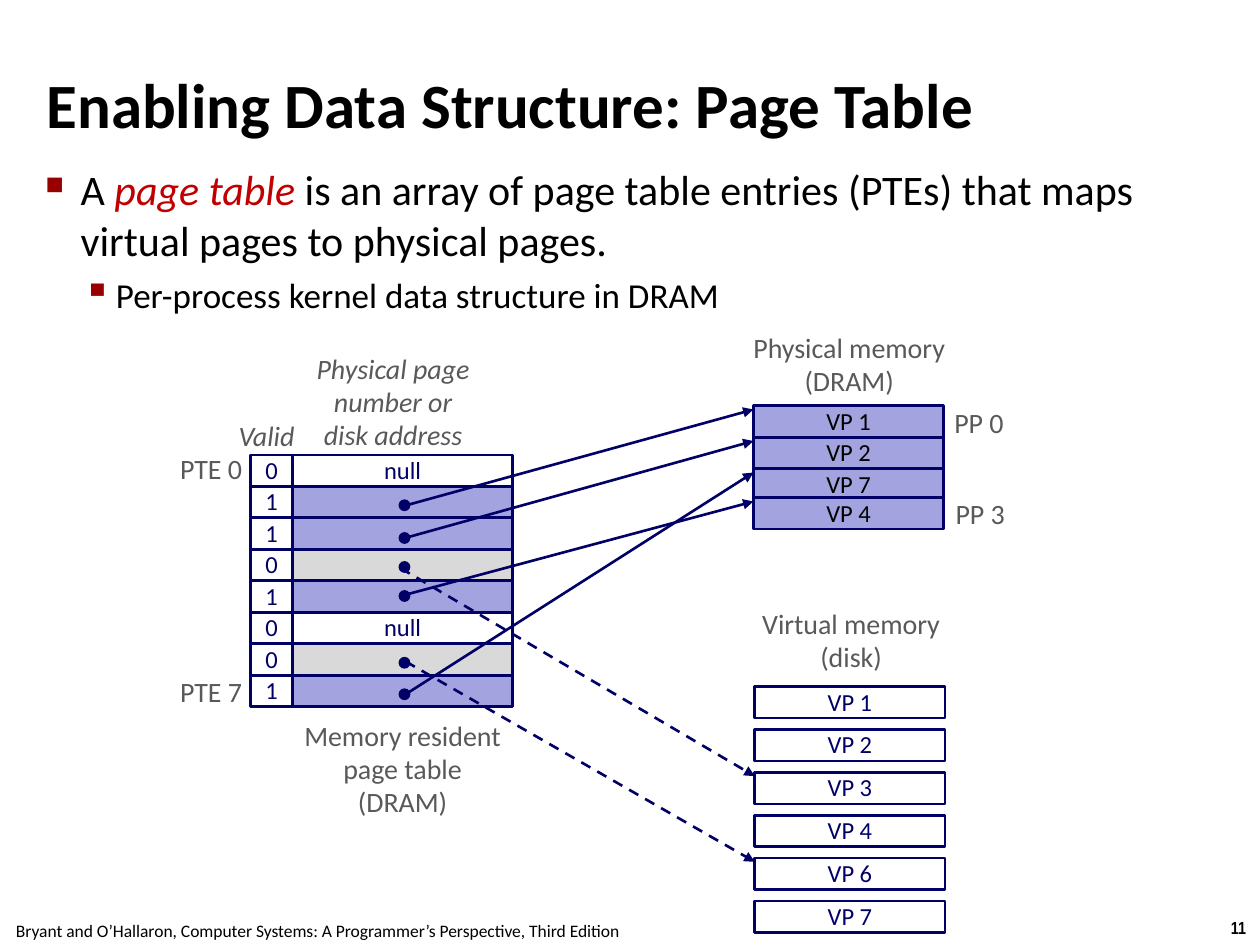
from dataclasses import dataclass

from lxml.etree import SubElement
from pptx import Presentation
from pptx.dml.color import RGBColor
from pptx.enum.dml import MSO_LINE
from pptx.enum.shapes import MSO_CONNECTOR, MSO_SHAPE
from pptx.enum.text import MSO_ANCHOR, PP_ALIGN
from pptx.oxml.ns import qn
from pptx.util import Pt

PX = 9144  # EMU per px, 100 px to the inch


@dataclass(frozen=True)
class Theme:
    font: str = "Calibri"
    narrow: str = "Arial Narrow"
    black: str = "000000"
    navy: str = "000066"
    gray: str = "595959"
    red: str = "C00000"
    bullet: str = "990000"
    white: str = "FFFFFF"
    blue: str = "A3A3E0"
    pale: str = "D9D9D9"
    title: int = 36
    body: int = 24
    sub: int = 20
    label: int = 16
    cell: int = 14
    small: int = 10
    line: float = 1.5


T = Theme()


def rgb(code):
    return RGBColor.from_string(code)


def style(font, size, color, bold=False, italic=False, name=T.font):
    font.name, font.size, font.color.rgb = name, Pt(size), rgb(color)
    font.bold, font.italic = bold, italic


def inset(frame, side, top):
    frame.margin_left = frame.margin_right = side * PX
    frame.margin_top = frame.margin_bottom = top * PX


def write(frame, text, size, color, align=PP_ALIGN.CENTER, space=0.98, **look):
    """Put each line of the text in its own paragraph."""
    frame.text = text
    for para in frame.paragraphs:
        para.alignment, para.line_spacing = align, space
        style(para.font, size, color, **look)


def add_box(slide, x, y, w, h, wrap=False, anchor=MSO_ANCHOR.MIDDLE):
    frame = slide.shapes.add_textbox(x * PX, y * PX, w * PX, h * PX).text_frame
    frame.word_wrap, frame.vertical_anchor = wrap, anchor
    inset(frame, 10, 5)
    return frame


def label(slide, x, y, w, h, text, **look):
    write(add_box(slide, x, y, w, h), text, T.label, T.gray, **look)


def shape(slide, kind, x, y, w, h, fill, line=T.line):
    item = slide.shapes.add_shape(kind, x * PX, y * PX, w * PX, h * PX)
    item.shadow.inherit = False
    item.fill.solid()
    item.fill.fore_color.rgb = rgb(fill)
    item.line.color.rgb, item.line.width = rgb(T.navy), Pt(line)
    return item


def cell(slide, x, y, w, h, fill, text="", color=T.navy):
    frame = shape(slide, MSO_SHAPE.RECTANGLE, x, y, w, h, fill).text_frame
    frame.word_wrap, frame.vertical_anchor = False, MSO_ANCHOR.MIDDLE
    inset(frame, 10, 5)
    if text:
        write(frame, text, T.cell, color)


def arrow(slide, x1, y1, x2, y2, dashed):
    wire = slide.shapes.add_connector(
        MSO_CONNECTOR.STRAIGHT, x1 * PX, y1 * PX, x2 * PX, y2 * PX)
    wire.line.color.rgb, wire.line.width = rgb(T.navy), Pt(T.line)
    if dashed:
        wire.line.dash_style = MSO_LINE.DASH
    SubElement(wire.line._get_or_add_ln(), qn("a:tailEnd"), type="triangle")
    SubElement(wire._element.spPr, qn("a:effectLst"))


def bullet(para, char, left, hang, scale, before):
    para.space_before = Pt(before)
    props = para._p.get_or_add_pPr()
    props.set("marL", str(left * PX))
    props.set("indent", str(-hang * PX))
    color = SubElement(props, qn("a:buClr"))
    SubElement(color, qn("a:srgbClr"), val=T.bullet)
    SubElement(props, qn("a:buSzPct"), val=str(scale * 1000))
    SubElement(props, qn("a:buChar"), char=char)


def heading(slide, x, y, w, h):
    frame = add_box(slide, x, y, w, h, wrap=True)
    inset(frame, 4, 4)
    write(frame, "Enabling Data Structure: Page Table", T.title, T.black,
          PP_ALIGN.LEFT, 1.0, bold=True)


def points(slide, x, y, w, h):
    frame = add_box(slide, x, y, w, h, wrap=True, anchor=MSO_ANCHOR.TOP)
    inset(frame, 4, 4)
    main, sub = frame.paragraphs[0], frame.add_paragraph()
    rest = ("is an array of page table entries (PTEs) that maps "
            "virtual pages to physical pages.")
    for text, color, italic in (("A ", T.black, False),
                                ("page table ", T.red, True),
                                (rest, T.black, False)):
        run = main.add_run()
        run.text = text
        style(run.font, T.body, color, italic=italic)
    bullet(main, "■", 28, 28, 60, 6)
    sub.text, sub.level = "Per-process kernel data structure in DRAM", 1
    style(sub.font, T.sub, T.black)
    bullet(sub, "▪", 56, 26, 110, 5)


def page_table(slide, x, y, w, step):
    flag = 33  # width of the valid column
    fills = {"null": T.white, "disk": T.pale, "page": T.blue}
    rows = ("null", "page", "page", "disk", "page", "null", "disk", "page")
    for i, kind in enumerate(rows):
        top = y + i * step
        cell(slide, x, top, flag, step, T.white, "1" if kind == "page" else "0")
        cell(slide, x + flag, top, w - flag, step, fills[kind],
             "null" if kind == "null" else "")
    # Captions around the table
    label(slide, x - 25, y - 33, 75, 37, "Valid", italic=True)
    label(slide, x + 40, y - 86, 146, 89,
          "Physical page\nnumber or\ndisk address", italic=True)
    label(slide, x + 28, y + 205, 185, 89,
          "Memory resident\npage table\n(DRAM)")
    for name, top in (("PTE 0", y - 7), ("PTE 7", y + 170)):
        label(slide, x - 67, top, 70, 37, name, align=PP_ALIGN.RIGHT)


def memory(slide, x, y, w, h, pages, tops, fill, color):
    """Stack the pages and return the arrow target of each."""
    for page, top in zip(pages, tops):
        cell(slide, x, y + top, w, h, fill, f"VP {page}", color)
    return {page: (x, y + top + 3) for page, top in zip(pages, tops)}


def dram(slide, x, y, w, h):
    label(slide, x - 13, y - 64, 178, 63, "Physical memory\n(DRAM)")
    for name, left, top in (("PP 0", 149, -4), ("PP 3", 150, 68)):
        label(slide, x + left, y + top, 60, 37, name)
    return memory(slide, x, y, w, h, (1, 2, 7, 4), (0, 25, 50, 73),
                  T.blue, T.black)


def disk(slide, x, y, w, h):
    label(slide, x - 8, y - 68, 169, 63, "Virtual memory\n(disk)")
    return memory(slide, x, y, w, h, (1, 2, 3, 4, 6, 7), range(0, 204, 34),
                  T.white, T.navy)


def links(slide, x, y, ram, store):
    # Top of dot, start of arrow, target, dashed
    for top, dx, dy, end, dashed in (
            (0, 2, 5, ram[1], False), (26, 8, 29, ram[2], False),
            (49, 1, 54, store[3], True), (72, 5, 75, ram[4], False),
            (125, 5, 128, store[6], True), (150, 5, 154, ram[7], False)):
        shape(slide, MSO_SHAPE.OVAL, x, y + top, 8, 8, T.navy, 1)
        arrow(slide, x + dx, y + dy, *end, dashed)


def footer(slide, x, y, w, h):
    write(add_box(slide, x - 2, y, 508, h),
          "Bryant and O’Hallaron, Computer Systems: "
          "A Programmer’s Perspective, Third Edition",
          T.small, T.black, space=1.0)
    write(add_box(slide, x + w - 34, y - 2, 34, h), "11", T.small, T.black,
          space=1.0, bold=True, name=T.narrow)


def main():
    deck = Presentation()
    deck.slide_width, deck.slide_height = 1000 * PX, 750 * PX
    slide = deck.slides.add_slide(deck.slide_layouts[6])
    footer(slide, 0, 725, 1000, 27)
    heading(slide, 33, 39, 906, 86)
    points(slide, 32, 126, 909, 141)
    page_table(slide, 199, 361, 208, 25)
    ram = dram(slide, 598, 322, 151, 25)
    store = disk(slide, 599, 545, 151, 25)
    links(slide, 317, 397, ram, store)
    deck.save("out.pptx")


if __name__ == "__main__":
    main()
